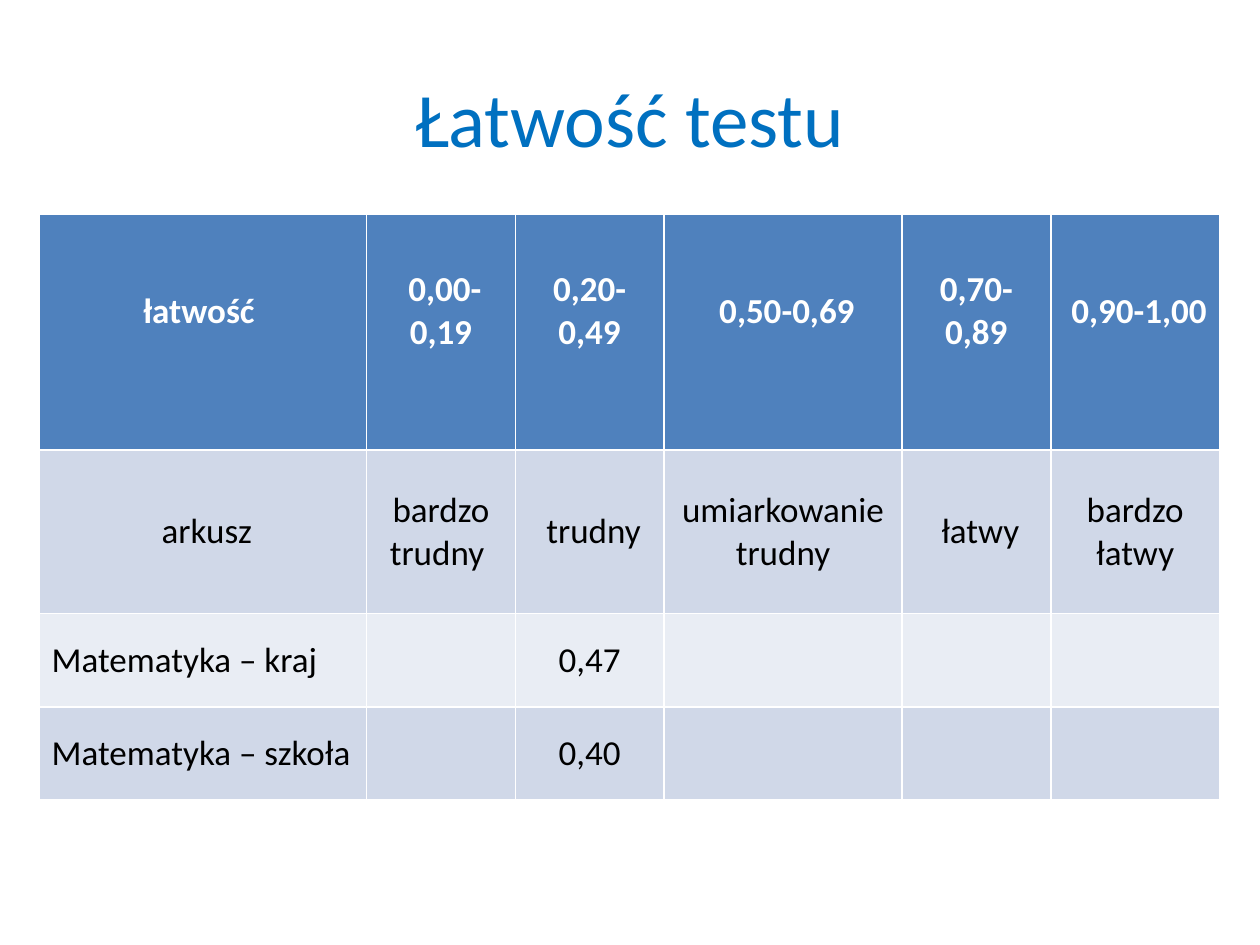
from pptx import Presentation
from pptx.dml.color import RGBColor
from pptx.enum.text import MSO_ANCHOR, PP_ALIGN
from pptx.util import Inches, Pt

COLORS = {
    "title": "0070C0",
    "header": "4F81BD",
    "header_text": "FFFFFF",
    "band_dark": "D0D8E8",
    "band_light": "E9EDF4",
    "text": "000000",
}
COLUMNS = [2.6, 1.18, 1.18, 1.89, 1.18, 1.34]
ROWS = [1.87, 1.3, 0.74, 0.74]
FILLS = ["header", "band_dark", "band_light", "band_dark"]
CELLS = [
    ["łatwość ", " 0,00-0,19", "0,20-0,49", " 0,50-0,69", "0,70-0,89", " 0,90-1,00"],
    [" arkusz", "bardzo trudny ", " trudny", "umiarkowanie trudny", " łatwy", "bardzo łatwy"],
    ["Matematyka – kraj", "", "0,47", "", "", ""],
    ["Matematyka – szkoła", "", "0,40", "", "", ""],
]


class Deck:
    font = "Calibri"

    def __init__(self, width, height):
        self.prs = Presentation()
        self.prs.slide_width = Inches(width)
        self.prs.slide_height = Inches(height)
        self.s = self.prs.slides.add_slide(self.prs.slide_layouts[5])

    def x(self, share):
        return int(self.prs.slide_width * share)

    def y(self, share):
        return int(self.prs.slide_height * share)

    def set_text(self, tf, text, size, color, align, bold=False):
        tf.text = text
        p = tf.paragraphs[0]
        p.alignment = align
        p.font.size = Pt(size)
        for r in p.runs:
            r.font.name = self.font
            r.font.size = Pt(size)
            r.font.bold = bold
            r.font.color.rgb = RGBColor.from_string(COLORS[color])

    def title(self, text, left, top, width, height):
        sp = self.s.shapes.title
        sp.left, sp.top = self.x(left), self.y(top)
        sp.width, sp.height = self.x(width), self.y(height)
        sp.text_frame.vertical_anchor = MSO_ANCHOR.MIDDLE
        self.set_text(sp.text_frame, text, 44, "title", PP_ALIGN.CENTER)

    def table(self, left, top, width, height):
        tbl = self.s.shapes.add_table(
            len(ROWS), len(COLUMNS), self.x(left), self.y(top), self.x(width), self.y(height)
        ).table
        for column, share in zip(tbl.columns, COLUMNS):
            column.width = self.x(width * share / sum(COLUMNS))
        for row, share in zip(tbl.rows, ROWS):
            row.height = self.y(height * share / sum(ROWS))
        for i, texts in enumerate(CELLS):
            for j, text in enumerate(texts):
                self.cell(tbl.cell(i, j), text, FILLS[i], i == 0, i > 1 and j == 0)

    def cell(self, cell, text, fill, header, label):
        cell.fill.solid()
        cell.fill.fore_color.rgb = RGBColor.from_string(COLORS[fill])
        cell.vertical_anchor = MSO_ANCHOR.MIDDLE
        if header:
            cell.margin_bottom = Inches(0.38)
        color = "header_text" if header else "text"
        align = PP_ALIGN.LEFT if label else PP_ALIGN.CENTER
        self.set_text(cell.text_frame, text, 20, color, align, header)


def main():
    deck = Deck(10, 7.5)
    deck.title("Łatwość testu", 0.05, 0.04, 0.9, 1 / 6)
    deck.table(0.031, 1.7 / 7.5, 0.937, 0.62)
    deck.prs.save("out.pptx")


if __name__ == "__main__":
    main()
